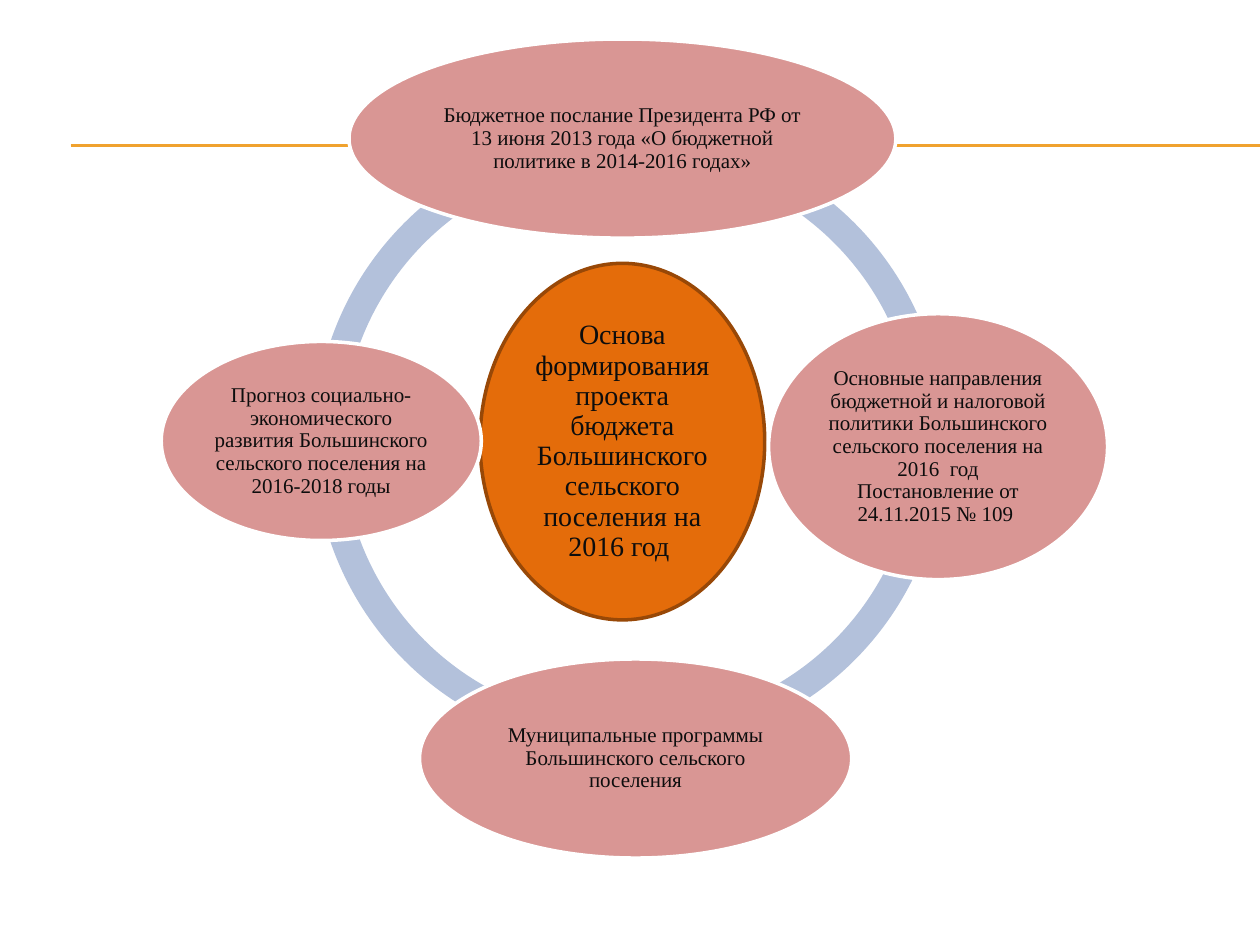
from pptx import Presentation
from pptx.dml.color import RGBColor
from pptx.enum.shapes import MSO_CONNECTOR as Link, MSO_SHAPE as Kind
from pptx.enum.text import MSO_ANCHOR as Anchor, PP_ALIGN as Align
from pptx.oxml.ns import qn
from pptx.util import Inches, Pt
from lxml.etree import SubElement

COLS, ROWS = 100, 75


def rgb(code):
    return RGBColor.from_string(code)


class Board:
    font = "Times New Roman"
    ink = "0D0D0D"
    gold = "F0A22E"
    ring = "B3C1DB"
    pink = "D99694"
    inset = Inches(0.02)

    def __init__(self, deck):
        self.slide = deck.slides.add_slide(deck.slide_layouts[6])
        self.col = deck.slide_width / COLS
        self.row = deck.slide_height / ROWS

    def place(self, x, y, w=0, h=0):
        return [round(n) for n in
                (x * self.col, y * self.row, w * self.col, h * self.row)]

    def rule(self, x, y, end):
        left, top, right, _ = self.place(x, y, end)
        line = self.slide.shapes.add_connector(
            Link.STRAIGHT, left, top, right, top)
        line.line.color.rgb = rgb(self.gold)
        line.line.width = Pt(0.75)
        SubElement(line._element.spPr, qn("a:effectLst"))

    def shape(self, kind, box, fill):
        item = self.slide.shapes.add_shape(kind, *self.place(*box))
        item.shadow.inherit = False
        item.fill.solid()
        item.fill.fore_color.rgb = rgb(fill)
        return item

    def arc(self, x, start, end):
        item = self.shape(Kind.BLOCK_ARC, (x, 10.5, 49.1, 49.1), self.ring)
        item.line.fill.background()
        # Angles are stored in 60000ths of a degree, scaled by 100000
        for i, value in enumerate((start * 0.6, end * 0.6, 0.046)):
            item.adjustments[i] = value

    def oval(self, box, texts, fill=pink, edge="FFFFFF", size=12):
        item = self.shape(Kind.OVAL, box, fill)
        item.line.color.rgb = rgb(edge)
        item.line.width = Pt(2)
        frame = item.text_frame
        frame.word_wrap = True
        frame.vertical_anchor = Anchor.MIDDLE
        frame.margin_left = frame.margin_right = self.inset
        frame.margin_top = frame.margin_bottom = self.inset
        for i, text in enumerate(texts):
            para = frame.add_paragraph() if i else frame.paragraphs[0]
            para.alignment = Align.CENTER
            para.line_spacing = 0.9
            run = para.add_run()
            run.text = text
            run.font.name = self.font
            run.font.size = Pt(size)
            run.font.color.rgb = rgb(self.ink)


def main():
    deck = Presentation()
    deck.slide_width, deck.slide_height = Inches(10), Inches(7.5)
    board = Board(deck)

    # Double gold rule
    for y in (11.5, 11.6):
        board.rule(5.6, y, COLS)

    # Ring: left edge, start and end in degrees
    for arc in ((24.9, 180, 270), (24.9, 90, 180),
                (25.9, 0.88, 92.49), (25.9, 267.51, 0.99)):
        board.arc(*arc)

    # Centre
    board.oval((38.1, 20.9, 22.6, 28.3),
               ["Основа формирования проекта бюджета Большинского "
                "сельского поселения на 2016 год "],
               fill="E46C0A", edge="984807", size=16)

    # Sources, clockwise from the top
    sources = [
        ((27.7, 3.1, 43.4, 15.8),
         ["Бюджетное послание Президента РФ от 13 июня 2013 года "
          "«О бюджетной политике в 2014-2016 годах»"]),
        ((61, 24.9, 26.9, 21.1),
         ["Основные направления бюджетной и налоговой политики "
          "Большинского сельского поселения на 2016  год",
          "Постановление от 24.11.2015 № 109 "]),
        ((33.3, 52.3, 34.3, 15.8),
         ["Муниципальные программы Большинского сельского поселения"]),
        ((12.8, 27.1, 25.4, 15.8),
         ["Прогноз социально-экономического развития Большинского "
          "сельского поселения на 2016-2018 годы"]),
    ]
    for box, texts in sources:
        board.oval(box, texts)

    deck.save("out.pptx")


if __name__ == "__main__":
    main()
